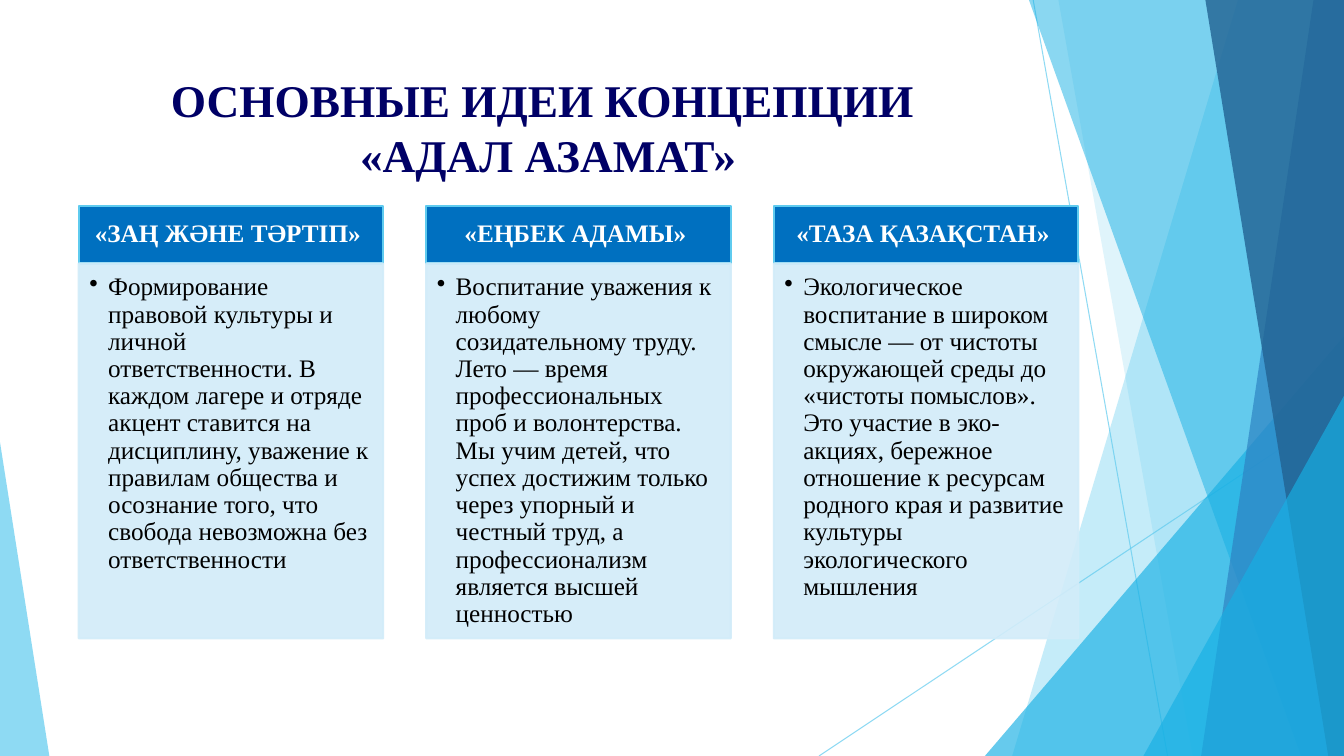
from lxml.etree import SubElement
from pptx import Presentation
from pptx.dml.color import RGBColor
from pptx.enum.shapes import MSO_CONNECTOR, MSO_SHAPE
from pptx.enum.text import MSO_ANCHOR, PP_ALIGN
from pptx.oxml.ns import qn
from pptx.util import Pt

PX = 9525
WIDTH, HEIGHT = 1280, 720
FONT = "Times New Roman"
COLORS = {
    "sky": "5FCBEF", "cyan": "17B0E4", "blue": "2E83C3", "deep": "226292",
    "header": "0070C0", "card": "D2ECF9", "title": "000066",
    "white": "FFFFFF", "black": "000000",
}

TITLE_LINES = ["ОСНОВНЫЕ ИДЕИ КОНЦЕПЦИИ ", "«АДАЛ АЗАМАТ»"]
IDEAS = [
    ("«ЗАҢ ЖӘНЕ ТӘРТІП» ",
     "Формирование правовой культуры и личной ответственности. В каждом лагере "
     "и отряде акцент ставится на дисциплину, уважение к правилам общества и "
     "осознание того, что свобода невозможна без ответственности"),
    ("«ЕҢБЕК АДАМЫ» ",
     "Воспитание уважения к любому созидательному труду. Лето — время "
     "профессиональных проб и волонтерства. Мы учим детей, что успех достижим "
     "только через упорный и честный труд, а профессионализм является высшей "
     "ценностью"),
    ("«ТАЗА ҚАЗАҚСТАН» ",
     "Экологическое воспитание в широком смысле — от чистоты окружающей среды до "
     "«чистоты помыслов». Это участие в эко-акциях, бережное отношение к ресурсам "
     "родного края и развитие культуры экологического мышления"),
]

# Thin rays: start x, start y, end x, end y
RAYS = [(984, 0, 1112, HEIGHT), (WIDTH, 387, 780, HEIGHT)]
# Bands reach the right edge: top-left x, bottom-left x, colour, opacity
# Triangles stand on the bottom edge: left, top, width, apex, colour, opacity
DECOR = [
    ("band", (1179, 964), "sky", 36),
    ("band", (1008, 1136), "sky", 20),
    ("triangle", (938, 320, 342, 1), "cyan", 66),
    ("band", (980, 1239), "cyan", 50),
    ("band", (1251, 1144), "blue", 70),
    ("band", (1148, 1265), "deep", 80),
    ("triangle", (1089, 377, 191, 1), "cyan", 66),
    ("triangle", (0, 421, 47, 0), "sky", 70),
]

TITLE_BOX = (71, 64, 902, 112)
CARD_LEFT, CARD_PITCH, CARD_WIDTH = 75, 331, 290
HEADER_TOP, HEADER_HEIGHT, BODY_HEIGHT = 196, 55, 357
BULLET_INDENT = 18


def px(*values):
    return [value * PX for value in values]


def rgb(name):
    return RGBColor.from_string(COLORS[name])


def set_opacity(shape, percent):
    """Apply one opacity to the fill and line colours of a shape."""
    for color in shape._element.spPr.iter(qn("a:srgbClr")):
        SubElement(color, qn("a:alpha"), val=str(percent * 1000))


def paint(shape, fill, line=None):
    shape.shadow.inherit = False
    shape.fill.solid()
    shape.fill.fore_color.rgb = rgb(fill)
    if line:
        shape.line.color.rgb = rgb(line)
        shape.line.width = Pt(1.5)
    else:
        shape.line.fill.background()


def add_span(para, text, size, color, bold=False):
    span = para.add_run()
    span.text = text
    span.font.name = FONT
    span.font.size = Pt(size)
    span.font.bold = bold
    span.font.color.rgb = rgb(color)


def set_frame(frame, margins, anchor):
    frame.word_wrap = True
    frame.vertical_anchor = anchor
    (frame.margin_left, frame.margin_top,
     frame.margin_right, frame.margin_bottom) = px(*margins)
    return frame.paragraphs[0]


def add_ray(page, ends):
    ray = page.shapes.add_connector(MSO_CONNECTOR.STRAIGHT, *px(*ends))
    ray.line.color.rgb = rgb("sky")
    ray.line.width = Pt(0.75)
    SubElement(ray._element.spPr, qn("a:effectLst"))
    set_opacity(ray, 70)


def add_decor(page, kind, geometry, color, opacity):
    if kind == "band":
        top_x, bottom_x = geometry
        outline = page.shapes.build_freeform(top_x, 0, scale=PX)
        outline.add_line_segments(
            [(WIDTH, 0), (WIDTH, HEIGHT), (bottom_x, HEIGHT)], close=True)
        shape = outline.convert_to_shape()
    else:
        left, top, width, apex = geometry
        shape = page.shapes.add_shape(
            MSO_SHAPE.ISOSCELES_TRIANGLE, *px(left, top, width, HEIGHT - top))
        shape.adjustments[0] = apex
    paint(shape, color)
    set_opacity(shape, opacity)


def add_title(page):
    box = page.shapes.add_textbox(*px(*TITLE_BOX))
    para = set_frame(box.text_frame, (10, 5, 10, 5), MSO_ANCHOR.TOP)
    para.alignment = PP_ALIGN.CENTER
    for number, line in enumerate(TITLE_LINES):
        if number:
            para.add_line_break()
        add_span(para, line, 32.4, "title", bold=True)


def add_card(page, left, heading, idea):
    header = page.shapes.add_shape(
        MSO_SHAPE.RECTANGLE, *px(left, HEADER_TOP, CARD_WIDTH, HEADER_HEIGHT))
    paint(header, "header", "sky")
    para = set_frame(header.text_frame, (13, 8, 13, 8), MSO_ANCHOR.MIDDLE)
    para.alignment = PP_ALIGN.CENTER
    para.line_spacing = 0.9
    add_span(para, heading, 18, "white", bold=True)

    body = page.shapes.add_shape(
        MSO_SHAPE.RECTANGLE,
        *px(left, HEADER_TOP + HEADER_HEIGHT, CARD_WIDTH, BODY_HEIGHT))
    paint(body, "card", "card")
    set_opacity(body, 90)
    para = set_frame(body.text_frame, (10, 10, 13, 15), MSO_ANCHOR.TOP)
    para.alignment = PP_ALIGN.LEFT
    para.line_spacing = 0.9
    props = para._p.get_or_add_pPr()
    props.set("marL", str(BULLET_INDENT * PX))
    props.set("indent", str(-BULLET_INDENT * PX))
    SubElement(props, qn("a:buChar"), char="•")
    add_span(para, idea, 18, "black")


def main():
    deck = Presentation()
    deck.slide_width, deck.slide_height = px(WIDTH, HEIGHT)
    page = deck.slides.add_slide(deck.slide_layouts[6])
    for ends in RAYS:
        add_ray(page, ends)
    for item in DECOR:
        add_decor(page, *item)
    add_title(page)
    for number, (heading, idea) in enumerate(IDEAS):
        add_card(page, CARD_LEFT + number * CARD_PITCH, heading, idea)
    deck.save("out.pptx")


if __name__ == "__main__":
    main()
